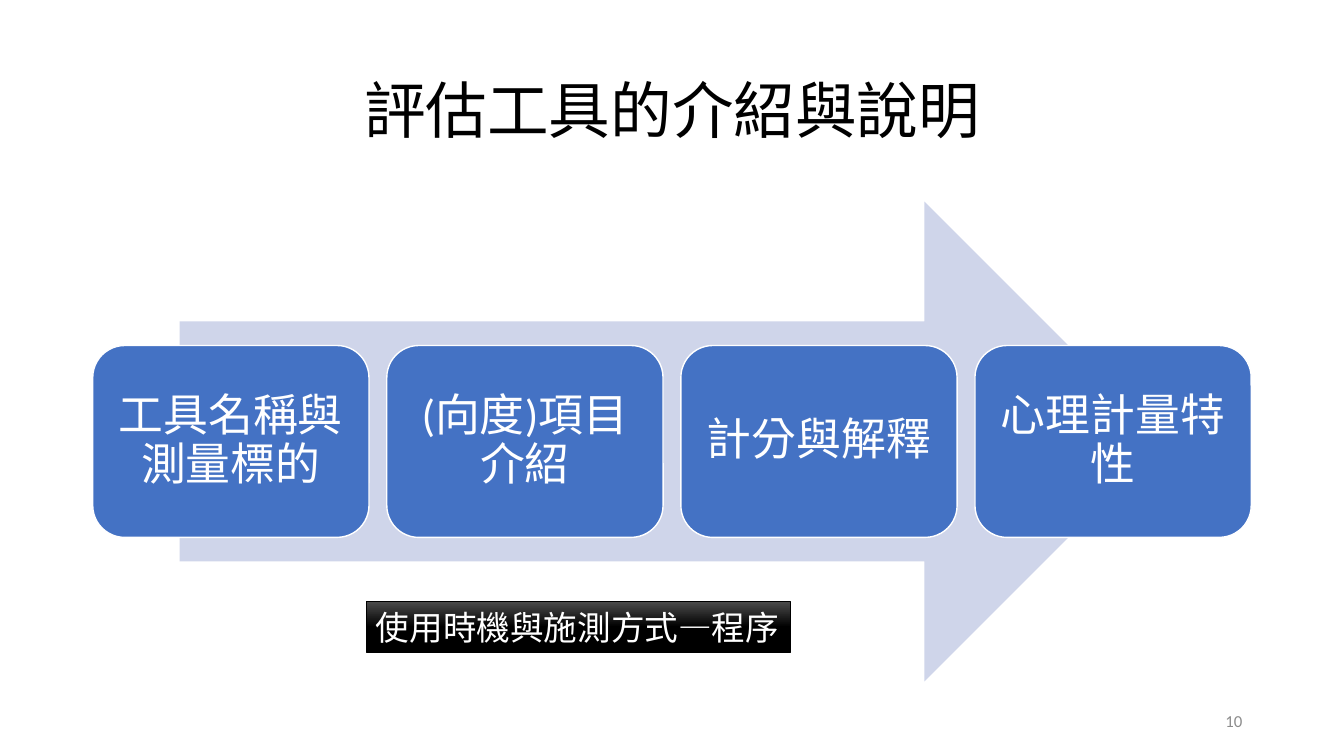
from dataclasses import dataclass

from pptx import Presentation
from pptx.dml.color import RGBColor
from pptx.enum.lang import MSO_LANGUAGE_ID as Lang
from pptx.enum.shapes import MSO_SHAPE as Shape
from pptx.enum.text import MSO_ANCHOR as Anchor, PP_ALIGN as Align
from pptx.util import Inches, Pt


@dataclass(frozen=True)
class Theme:
    """Colours, font and type sizes of the slide."""
    font: str = "Calibri"
    ink: str = "000000"
    white: str = "FFFFFF"
    arrow: str = "CFD5EA"
    step: str = "4472C4"
    sheen: str = "4B4B4B"
    muted: str = "8C8C8C"
    title_size: int = 44
    step_size: int = 32
    note_size: int = 24
    number_size: int = 12


THEME = Theme()
STEPS = ("工具名稱與測量標的", "(向度)項目介紹", "計分與解釋", "心理計量特性")


def write(holder, text, size, color, align=Align.CENTER, spacing=1.0, wrap=True):
    """Write one vertically centred paragraph into a shape or text box."""
    frame = holder.text_frame
    frame.word_wrap = wrap
    frame.vertical_anchor = Anchor.MIDDLE
    paragraph = frame.paragraphs[0]
    paragraph.alignment = align
    paragraph.line_spacing = spacing
    run = paragraph.add_run()
    run.text = text
    run.font.name = THEME.font
    run.font.size = Pt(size)
    run.font.color.rgb = RGBColor.from_string(color)
    run.font.language_id = Lang.TRADITIONAL_CHINESE


def add_block(slide, kind, box, fill):
    """Add a flat, unlined preset shape filling the box."""
    block = slide.shapes.add_shape(kind, *map(Inches, box))
    block.shadow.inherit = False
    block.fill.solid()
    block.fill.fore_color.rgb = RGBColor.from_string(fill)
    block.line.fill.background()
    return block


def outline(block, color, width):
    """Give a shape a solid outline."""
    block.line.color.rgb = RGBColor.from_string(color)
    block.line.width = Pt(width)


def add_label(slide, box, text, size, color, **style):
    """Add a line of plain text in the box."""
    label = slide.shapes.add_textbox(*map(Inches, box))
    write(label, text, size, color, **style)


def add_process(slide, box, steps):
    """Draw the broad arrow with evenly spaced steps across its middle."""
    left, top, width, height = box
    inset = width * 0.075
    arrow_box = (left + inset, top, width - 2 * inset, height)
    add_block(slide, Shape.RIGHT_ARROW, arrow_box, THEME.arrow)
    step_width, step_height = 2.74, height * 0.4
    pitch = (width - step_width) / (len(steps) - 1)
    for index, step in enumerate(steps):
        step_box = (left + index * pitch, top + height * 0.3, step_width, step_height)
        card = add_block(slide, Shape.ROUNDED_RECTANGLE, step_box, THEME.step)
        outline(card, THEME.white, 1)
        frame = card.text_frame
        frame.margin_left = frame.margin_right = Inches(0.13)
        frame.margin_top = frame.margin_bottom = Inches(0.13)
        write(card, step, THEME.step_size, THEME.white, spacing=0.9)


def add_note(slide, box, text):
    """Add the black note with a sheen along its top edge."""
    note = add_block(slide, Shape.RECTANGLE, box, THEME.ink)
    note.fill.gradient()
    note.fill.gradient_angle = 270
    for stop, color, position in zip(note.fill.gradient_stops, (THEME.sheen, THEME.ink), (0, 0.5)):
        stop.color.rgb = RGBColor.from_string(color)
        stop.position = position
    outline(note, THEME.ink, 0.5)
    write(note, text, THEME.note_size, THEME.white, align=Align.LEFT, wrap=False)


def main():
    """Build and save the slide."""
    deck = Presentation()
    deck.slide_width, deck.slide_height = Inches(13.33), Inches(7.5)
    slide = deck.slides.add_slide(deck.slide_layouts[6])
    add_label(slide, (0.92, 0.4, 11.5, 1.45), "評估工具的介紹與說明",
              THEME.title_size, THEME.ink, spacing=0.9)
    add_process(slide, (0.92, 2, 11.49, 4.76), STEPS)
    add_label(slide, (9.42, 6.95, 3, 0.4), "10", THEME.number_size, THEME.muted,
              align=Align.RIGHT)
    add_note(slide, (3.63, 5.97, 4.21, 0.5), "使用時機與施測方式—程序")
    deck.save("out.pptx")


if __name__ == "__main__":
    main()
